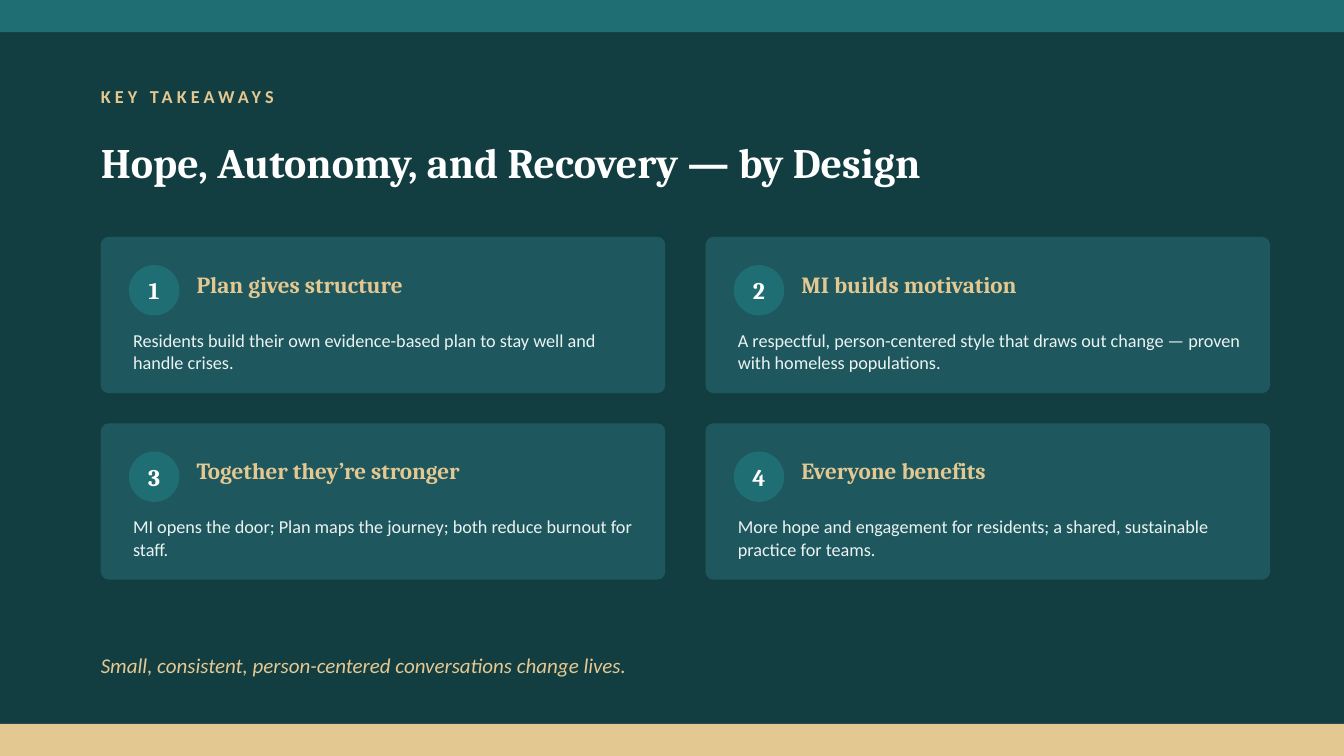
from pptx import Presentation
from pptx import util as u
from pptx.dml.color import RGBColor
from pptx.enum import shapes, text

COLORS = {
    "background": "123E42",
    "teal": "1F6E73",
    "card": "1E585E",
    "sand": "E4C892",
    "white": "FFFFFF",
    "mist": "EAF3F2",
}
TAKEAWAYS = [
    ("Plan gives structure",
     "Residents build their own evidence-based plan to stay well and handle crises."),
    ("MI builds motivation",
     "A respectful, person-centered style that draws out change — proven with homeless populations."),
    ("Together they’re stronger",
     "MI opens the door; Plan maps the journey; both reduce burnout for staff."),
    ("Everyone benefits",
     "More hope and engagement for residents; a shared, sustainable practice for teams."),
]
SLIDE_WIDTH, SLIDE_HEIGHT = 960, 540
MARGIN = 72
BAR_HEIGHT = 23
CARD_TOP, CARD_WIDTH, CARD_HEIGHT = 169.2, 403.2, 111.6
COLUMN_STEP, ROW_STEP = 432, 133.2

presentation = Presentation()
presentation.slide_width = u.Pt(SLIDE_WIDTH)
presentation.slide_height = u.Pt(SLIDE_HEIGHT)
slide = presentation.slides.add_slide(presentation.slide_layouts[5])
slide.background.fill.solid()
slide.background.fill.fore_color.rgb = RGBColor.from_string(COLORS["background"])


def add_filled(kind, left, top, width, height, color):
    shape = slide.shapes.add_shape(kind, u.Pt(left), u.Pt(top), u.Pt(width), u.Pt(height))
    shape.shadow.inherit = False
    shape.fill.solid()
    shape.fill.fore_color.rgb = RGBColor.from_string(COLORS[color])
    shape.line.fill.background()
    return shape


def write(shape, words, size, font, color, bold=False, align=text.PP_ALIGN.LEFT):
    """Fill a shape with one vertically centred paragraph and return that paragraph."""
    frame = shape.text_frame
    frame.text = words
    frame.word_wrap = True
    frame.auto_size = text.MSO_AUTO_SIZE.NONE
    frame.vertical_anchor = text.MSO_ANCHOR.MIDDLE
    frame.margin_left = frame.margin_right = frame.margin_top = frame.margin_bottom = 0
    paragraph = frame.paragraphs[0]
    paragraph.alignment = align
    run_font = paragraph.runs[0].font
    run_font.size = u.Pt(size)
    run_font.name = font
    run_font.bold = bold
    run_font.color.rgb = RGBColor.from_string(COLORS[color])
    return paragraph


# Bars along the top and bottom edges
rectangle = shapes.MSO_SHAPE.RECTANGLE
add_filled(rectangle, 0, 0, SLIDE_WIDTH, BAR_HEIGHT, "teal")
add_filled(rectangle, 0, SLIDE_HEIGHT - BAR_HEIGHT, SLIDE_WIDTH, BAR_HEIGHT, "sand")

# Heading
eyebrow = slide.shapes.add_textbox(u.Pt(MARGIN), u.Pt(54), u.Pt(792), u.Pt(28.8))
paragraph = write(eyebrow, "KEY TAKEAWAYS", 13, "Calibri", "sand", bold=True)
paragraph.runs[0]._r.get_or_add_rPr().set("spc", "300")

title = slide.shapes.title
title.left, title.top = u.Pt(MARGIN), u.Pt(82.8)
title.width, title.height = u.Pt(813.6), u.Pt(64.8)
write(title, "Hope, Autonomy, and Recovery — by Design", 30, "Cambria", "white", bold=True)

# Takeaway cards, two by two
for index, (heading, detail) in enumerate(TAKEAWAYS):
    row, column = divmod(index, 2)
    left = MARGIN + column * COLUMN_STEP
    top = CARD_TOP + row * ROW_STEP

    card = add_filled(shapes.MSO_SHAPE.ROUNDED_RECTANGLE, left, top,
                      CARD_WIDTH, CARD_HEIGHT, "card")
    card.adjustments[0] = 0.05

    badge = add_filled(shapes.MSO_SHAPE.OVAL, left + 20.16, top + 20.16, 36, 36, "teal")
    write(badge, str(index + 1), 17, "Cambria", "white", bold=True,
          align=text.PP_ALIGN.CENTER)

    heading_box = slide.shapes.add_textbox(
        u.Pt(left + 68.4), u.Pt(top + 15.84), u.Pt(316.8), u.Pt(36))
    write(heading_box, heading, 16.5, "Cambria", "sand", bold=True)

    detail_box = slide.shapes.add_textbox(
        u.Pt(left + 23.04), u.Pt(top + 56.16), u.Pt(360), u.Pt(50.4))
    write(detail_box, detail, 13, "Calibri", "mist").line_spacing = 1.03

# Closing line
closing = slide.shapes.add_textbox(u.Pt(MARGIN), u.Pt(457.2), u.Pt(813.6), u.Pt(36))
paragraph = write(closing, "Small, consistent, person-centered conversations change lives.",
                  15, "Calibri", "sand")
paragraph.runs[0].font.italic = True

presentation.save("out.pptx")
